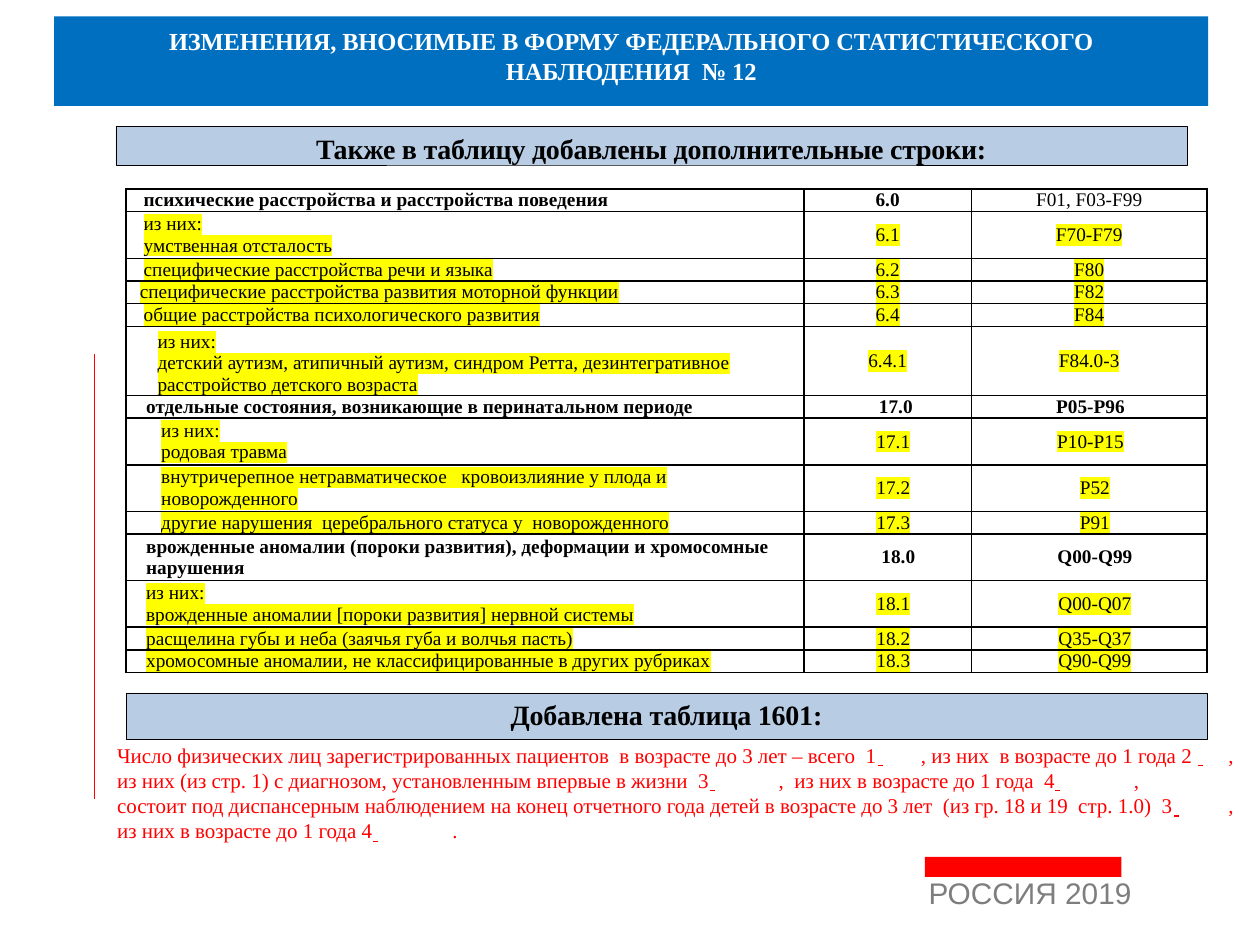
from lxml import etree
from pptx import Presentation
from pptx.dml.color import RGBColor
from pptx.enum import shapes, text
from pptx.oxml.ns import qn
from pptx.util import Inches, Pt

RED = RGBColor(0xFF, 0x00, 0x00)
BLUE = RGBColor(0x00, 0x6F, 0xC0)
PALE = RGBColor(0xB8, 0xCD, 0xE4)
GREY = RGBColor(0x7E, 0x7E, 0x7E)
BLACK = RGBColor(0x00, 0x00, 0x00)
WHITE = RGBColor(0xFF, 0xFF, 0xFF)
YELLOW = "FFFF00"
SERIF = "Times New Roman"

COLS = (5.38, 1.33, 1.87)
LINE_H = 0.18
ROWS = [
    (["психические расстройства и расстройства поведения"], 0.09, "6.0", 0, "F01, F03-F99", 0),
    (["из них:", "умственная отсталость"], 0.09, "6.1", 0, "F70-F79", 0),
    (["специфические расстройства речи и языка"], 0.09, "6.2", 0, "F80", 0),
    (["специфические расстройства развития моторной функции"], 0.06, "6.3", 0, "F82", 0),
    (["общие расстройства психологического развития"], 0.09, "6.4", 0, "F84", 0),
    (["из них:", "детский аутизм, атипичный аутизм, синдром Ретта, "
      "дезинтегративное расстройство детского возраста"], 0.2, "6.4.1", 0, "F84.0-3", 0),
    (["отдельные состояния, возникающие в перинатальном периоде"], 0.09,
     "17.0", 0.13, "P05-Р96", 0.02),
    (["из них:", "родовая травма"], 0.21, "17.1", 0.09, "Р10-Р15", 0.02),
    (["внутричерепное нетравматическое   кровоизлияние у плода и", "новорожденного"], 0.21,
     "17.2", 0.09, "Р52", 0.09),
    (["другие нарушения  церебрального статуса у  новорожденного"], 0.21,
     "17.3", 0.09, "Р91", 0.09),
    (["врожденные аномалии (пороки развития), деформации и хромосомные нарушения"], 0.09,
     "18.0", 0.17, "Q00-Q99", 0.09),
    (["из них:", "врожденные аномалии [пороки развития] нервной системы"], 0.09,
     "18.1", 0.09, "Q00-Q07", 0.09),
    (["расщелина губы и неба (заячья губа и волчья пасть)"], 0.09, "18.2", 0.09, "Q35-Q37", 0.09),
    (["хромосомные аномалии, не классифицированные в других рубриках"], 0.09,
     "18.3", 0.09, "Q90-Q99", 0.09),
]
HEADINGS = {"6.0", "17.0", "18.0"}
TWO_LINES = {"6.1", "17.1", "17.2", "18.0", "18.1"}

NOTE = [
    ((5.25, 6.38, 8.07, 8.82), [
        "Число физических лиц зарегистрированных пациентов  в возрасте до 3 лет – всего  1",
        ", из них  в возрасте до 1 года 2 ",
        ",  из них (из стр. 1) с диагнозом, установленным впервые в жизни  3",
        ",  из них в возрасте до 1 года  4", ","]),
    ((2.66, 8.82), [
        "состоит под диспансерным наблюдением на конец отчетного года детей в возрасте "
        "до 3 лет  (из гр. 18 и 19  стр. 1.0)  3",
        ",  из них в возрасте до 1 года 4", "."]),
]


def set_attrs(obj, **values):
    for name, value in values.items():
        setattr(obj, name, value)


def add_run(p, words, size, color, bold=False, font=SERIF, highlight=None, spc=0, underline=False):
    r = p.add_run()
    r.text = words
    set_attrs(r.font, size=Pt(size), bold=bold, underline=underline)
    r.font.color.rgb = color
    rPr = r.font._element
    if highlight:
        mark = etree.SubElement(rPr, qn("a:highlight"))
        etree.SubElement(mark, qn("a:srgbClr"), val=highlight)
    r.font.name = font
    if spc:
        rPr.set("spc", str(int(spc * 100)))


def set_frame(tf, top=0.0, anchor=text.MSO_ANCHOR.TOP):
    set_attrs(tf, word_wrap=True, margin_left=0, margin_right=0, margin_bottom=0,
              margin_top=Inches(top), vertical_anchor=anchor, auto_size=text.MSO_AUTO_SIZE.NONE)


def place(sp, x, y, w, h):
    set_attrs(sp, left=Inches(x), top=Inches(y), width=Inches(w), height=Inches(h))


def add_box(s, x, y, w, h, fill, line=None):
    sp = s.shapes.add_shape(shapes.MSO_SHAPE.RECTANGLE, Inches(x), Inches(y), Inches(w), Inches(h))
    sp.shadow.inherit = False
    sp.fill.solid()
    sp.fill.fore_color.rgb = fill
    if line is None:
        sp.line.fill.background()
    else:
        sp.line.color.rgb = line
        sp.line.width = Pt(0.25)
    return sp


def add_header(s, x, y, w, h):
    bar = add_box(s, x, y, w, h, BLUE)
    title = s.shapes.title
    bar._element.addnext(title._element)
    place(title, x + 0.44, y + 0.07, w - 0.88, 0.48)
    tf = title.text_frame
    set_frame(tf, 0.01)
    lines = ("ИЗМЕНЕНИЯ, ВНОСИМЫЕ В ФОРМУ ФЕДЕРАЛЬНОГО СТАТИСТИЧЕСКОГО", "НАБЛЮДЕНИЯ  № 12")
    for i, words in enumerate(lines):
        p = tf.add_paragraph() if i else tf.paragraphs[0]
        set_attrs(p, alignment=text.PP_ALIGN.CENTER, space_before=Pt(0 if i else 0.9))
        add_run(p, words, 14, WHITE, True, spc=-0.1)


def add_banner(s, x, y, w, h, words):
    tf = add_box(s, x, y, w, h, PALE, BLACK).text_frame
    set_frame(tf, 0.04)
    p = tf.paragraphs[0]
    set_attrs(p, alignment=text.PP_ALIGN.CENTER, space_before=Pt(3.1))
    add_run(p, words, 16, BLACK, True, spc=-0.1)


def set_borders(tcPr):
    for i, side in enumerate(("lnL", "lnR", "lnT", "lnB")):
        ln = etree.Element(qn("a:" + side), w=str(Pt(1)))
        fill = etree.SubElement(ln, qn("a:solidFill"))
        etree.SubElement(fill, qn("a:srgbClr"), val=str(BLACK))
        tcPr.insert(i, ln)


def fill_cell(cell, lines, indent, margin, align, bold, highlight):
    set_attrs(cell, margin_left=Inches(margin), margin_right=Inches(margin), margin_top=0,
              margin_bottom=0, vertical_anchor=text.MSO_ANCHOR.MIDDLE)
    cell.fill.background()
    set_borders(cell._tc.get_or_add_tcPr())
    tf = cell.text_frame
    for i, words in enumerate(lines):
        p = tf.add_paragraph() if i else tf.paragraphs[0]
        p.alignment = align
        p._p.get_or_add_pPr().set("marL", str(Inches(indent)))
        add_run(p, words, 11, BLACK, bold, highlight=highlight)


def add_rows_table(s, x, y, w, h):
    gf = s.shapes.add_table(len(ROWS), len(COLS), Inches(x), Inches(y), Inches(w), Inches(h))
    tbl = gf.table
    set_attrs(tbl, first_row=False, horz_banding=False)
    for col, width in zip(tbl.columns, COLS):
        col.width = Inches(width)
    left, center = text.PP_ALIGN.LEFT, text.PP_ALIGN.CENTER
    for i, (lines, indent, code, code_indent, icd, icd_indent) in enumerate(ROWS):
        count = 3 if code == "6.4.1" else 2 if code in TWO_LINES else 1
        tbl.rows[i].height = Inches(0.55 if count == 3 else LINE_H * count + 0.01 * (count - 1))
        heading = code in HEADINGS
        highlight = None if heading else YELLOW
        margin = 0.05 if code.startswith("6") else 0.07
        cells = tbl.rows[i].cells
        fill_cell(cells[0], lines, indent, margin, left, heading, highlight)
        fill_cell(cells[1], [code], code_indent, margin, center, heading, highlight)
        fill_cell(cells[2], [icd], icd_indent, margin, center, heading and i > 0, highlight)
        if count == 3:
            cells[0].vertical_anchor = text.MSO_ANCHOR.BOTTOM


def add_note(s, x, y, w, h):
    tf = s.shapes.add_textbox(Inches(x), Inches(y), Inches(w), Inches(h)).text_frame
    set_frame(tf)
    for i, (stops, parts) in enumerate(NOTE):
        p = tf.add_paragraph() if i else tf.paragraphs[0]
        p.line_spacing = Pt(14.4)
        pPr = p._p.get_or_add_pPr()
        pPr.set("marL", str(Inches(0.01)))
        tabs = etree.SubElement(pPr, qn("a:tabLst"))
        for stop in stops:
            etree.SubElement(tabs, qn("a:tab"), pos=str(Inches(stop)), algn="l")
        for j, words in enumerate(parts):
            if j:
                add_run(p, " \t", 12, RED, underline=True)
            add_run(p, words, 12, RED)


def add_margin_line(s, x, y, h):
    ln = s.shapes.add_connector(shapes.MSO_CONNECTOR.STRAIGHT,
                                Inches(x), Inches(y), Inches(x), Inches(y + h))
    ln.line.color.rgb = RED
    ln.line.width = Pt(0.75)
    etree.SubElement(ln._element.spPr, qn("a:effectLst"))


def add_footer(s, x, y, w):
    add_box(s, x, y, w, 0.16, RED)
    tf = s.shapes.add_textbox(Inches(x + 0.02), Inches(y + 0.15), Inches(w + 0.1), Inches(0.29)).text_frame
    set_frame(tf)
    p = tf.paragraphs[0]
    p.line_spacing = Pt(19.9)
    p._p.get_or_add_pPr().set("marL", str(Inches(0.01)))
    add_run(p, "РОССИЯ 2019", 17, GREY, font="Arial")


def main():
    prs = Presentation()
    set_attrs(prs, slide_width=Inches(10), slide_height=Inches(7.5))
    s = prs.slides.add_slide(prs.slide_layouts[5])
    add_footer(s, 7.34, 6.8, 1.56)
    add_margin_line(s, 0.75, 2.81, 3.53)
    add_header(s, 0.43, 0.13, 9.16, 0.71)
    add_banner(s, 0.92, 1, 8.5, 0.31, "Также в таблицу добавлены дополнительные строки:")
    add_rows_table(s, 1, 1.5, sum(COLS), 3.86)
    add_banner(s, 1, 5.5, 8.58, 0.37, "Добавлена таблица 1601:")
    add_note(s, 0.92, 5.89, 8.93, 0.81)
    prs.save("out.pptx")


if __name__ == "__main__":
    main()
